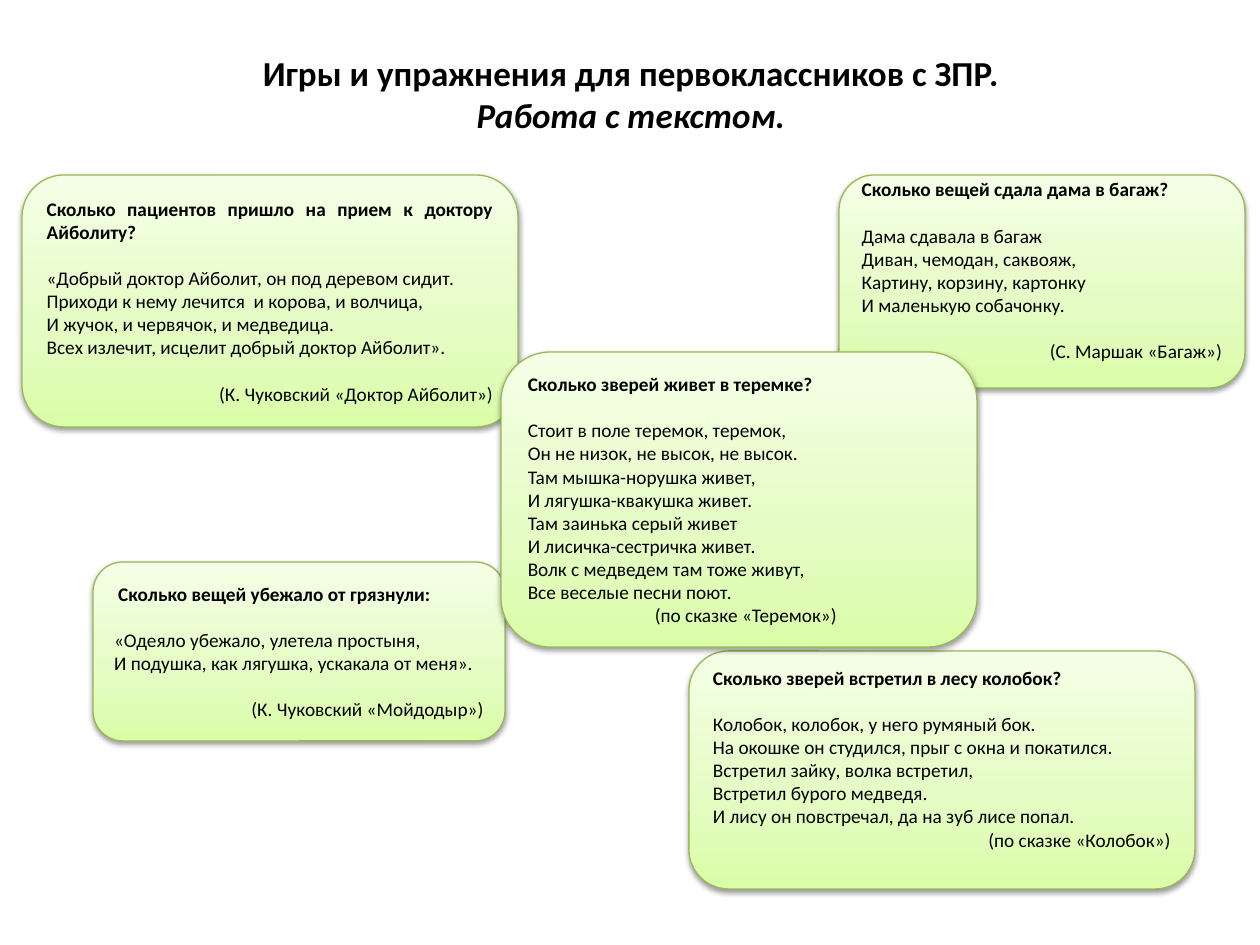
from lxml.etree import SubElement
from pptx import Presentation
from pptx.dml.color import RGBColor
from pptx.enum.shapes import MSO_SHAPE
from pptx.enum.text import MSO_ANCHOR, PP_ALIGN
from pptx.oxml.ns import qn
from pptx.util import Emu, Pt

PX_PER_INCH = 126
FONT = "Calibri"
LINE = 23          # height of one text line in px
INSET = 6          # default bottom inset of a card in px
STOPS = [(0, "DAFDA7"), (35, "E4FCC2"), (100, "F5FFE7")]

# Box, heading, verses, source line, then layout options
CARDS = [
    ((22, 175, 496, 252),
     "Сколько пациентов пришло на прием к доктору Айболиту?",
     ["«Добрый доктор Айболит, он под деревом сидит.",
      "Приходи к нему лечится  и корова, и волчица,",
      "И жучок, и червячок, и медведица.",
      "Всех излечит, исцелит добрый доктор Айболит»."],
     "(К. Чуковский «Доктор Айболит»)", {"source_gap": LINE}),
    ((93, 562, 412, 179),
     "Сколько вещей убежало от грязнули:",
     ["«Одеяло убежало, улетела простыня,",
      "И подушка, как лягушка, ускакала от меня»."],
     "(К. Чуковский «Мойдодыр»)", {"source_gap": LINE, "heading_indent": 4}),
    ((839, 175, 406, 213),
     "Сколько вещей сдала дама в багаж?",
     ["Дама сдавала в багаж",
      "Диван, чемодан, саквояж,",
      "Картину, корзину, картонку",
      "И маленькую собачонку."],
     "(С. Маршак «Багаж»)", {"source_gap": LINE, "bottom": INSET + LINE}),
    ((689, 651, 506, 238),
     "Сколько зверей встретил в лесу колобок?",
     ["Колобок, колобок, у него румяный бок.",
      "На окошке он студился, прыг с окна и покатился.",
      "Встретил зайку, волка встретил,",
      "Встретил бурого медведя.",
      "И лису он повстречал, да на зуб лисе попал."],
     "(по сказке «Колобок»)", {"bottom": INSET + LINE}),
    ((501, 352, 476, 295),
     "Сколько зверей живет в теремке?",
     ["Стоит в поле теремок, теремок,",
      "Он не низок, не высок, не высок.",
      "Там мышка-норушка живет,",
      "И лягушка-квакушка живет.",
      "Там заинька серый живет",
      "И лисичка-сестричка живет.",
      "Волк с медведем там тоже живут,",
      "Все веселые песни поют."],
     "(по сказке «Теремок»)", {"source_indent": 127}),
]


def px(n):
    return Emu(round(n * 914400 / PX_PER_INCH))


def color(value):
    return RGBColor.from_string(value)


def style(p, size, bold, align):
    p.alignment = align
    p.font.name = FONT
    p.font.size = Pt(size)
    p.font.bold = bold
    p.font.color.rgb = color("000000")


def add_title(slide, box, first, second):
    tf = slide.shapes.add_textbox(*map(px, box)).text_frame
    tf.word_wrap = True
    tf.vertical_anchor = MSO_ANCHOR.MIDDLE
    p = tf.paragraphs[0]
    style(p, 20, True, PP_ALIGN.CENTER)
    p.add_run().text = first
    p.add_line_break()
    r = p.add_run()
    r.text = second
    r.font.italic = True


def set_gradient(sp):
    sp.fill.gradient()
    sp.fill.gradient_angle = 90
    stops = sp._element.spPr.find(qn("a:gradFill")).find(qn("a:gsLst"))
    stops.clear()
    for position, value in STOPS:
        gs = SubElement(stops, qn("a:gs"), pos=str(position * 1000))
        SubElement(gs, qn("a:srgbClr"), val=value)


def set_shadow(sp):
    sp.shadow.inherit = False
    effects = sp._element.spPr.find(qn("a:effectLst"))
    shadow = SubElement(effects, qn("a:outerShdw"), blurRad=str(Pt(3.1)),
                        dist=str(Pt(1.6)), dir="5400000", rotWithShape="0")
    shade = SubElement(shadow, qn("a:srgbClr"), val="000000")
    SubElement(shade, qn("a:alpha"), val="38000")


def add_line(tf, text, bold=False, align=PP_ALIGN.JUSTIFY, gap=0, indent=0):
    p = tf.paragraphs[0] if not tf.text else tf.add_paragraph()
    p.text = text
    style(p, 11, bold, align)
    p.space_before = px(gap)
    if indent:
        p._p.get_or_add_pPr().set("marL", str(px(indent)))


def add_card(slide, box, heading, verses, source, source_gap=0,
             heading_indent=0, source_indent=0, bottom=INSET):
    sp = slide.shapes.add_shape(MSO_SHAPE.ROUNDED_RECTANGLE, *map(px, box))
    set_gradient(sp)
    sp.line.color.rgb = color("98B955")
    sp.line.width = Pt(0.75)
    set_shadow(sp)

    tf = sp.text_frame
    tf.word_wrap = True
    tf.vertical_anchor = MSO_ANCHOR.MIDDLE
    tf.margin_bottom = px(bottom)
    add_line(tf, heading, bold=True, indent=heading_indent)
    for i, verse in enumerate(verses):
        add_line(tf, verse, gap=0 if i else LINE)
    align = PP_ALIGN.JUSTIFY if source_indent else PP_ALIGN.RIGHT
    add_line(tf, source, align=align, gap=source_gap, indent=source_indent)


def main():
    prs = Presentation()
    prs.slide_width, prs.slide_height = px(1260), px(945)
    slide = prs.slides.add_slide(prs.slide_layouts[6])

    # Title
    add_title(slide, (64, 45, 1134, 97),
              "Игры и упражнения для первоклассников с ЗПР.",
              "Работа с текстом.")

    # Cards, back to front
    for box, heading, verses, source, options in CARDS:
        add_card(slide, box, heading, verses, source, **options)

    prs.save("out.pptx")


if __name__ == "__main__":
    main()
